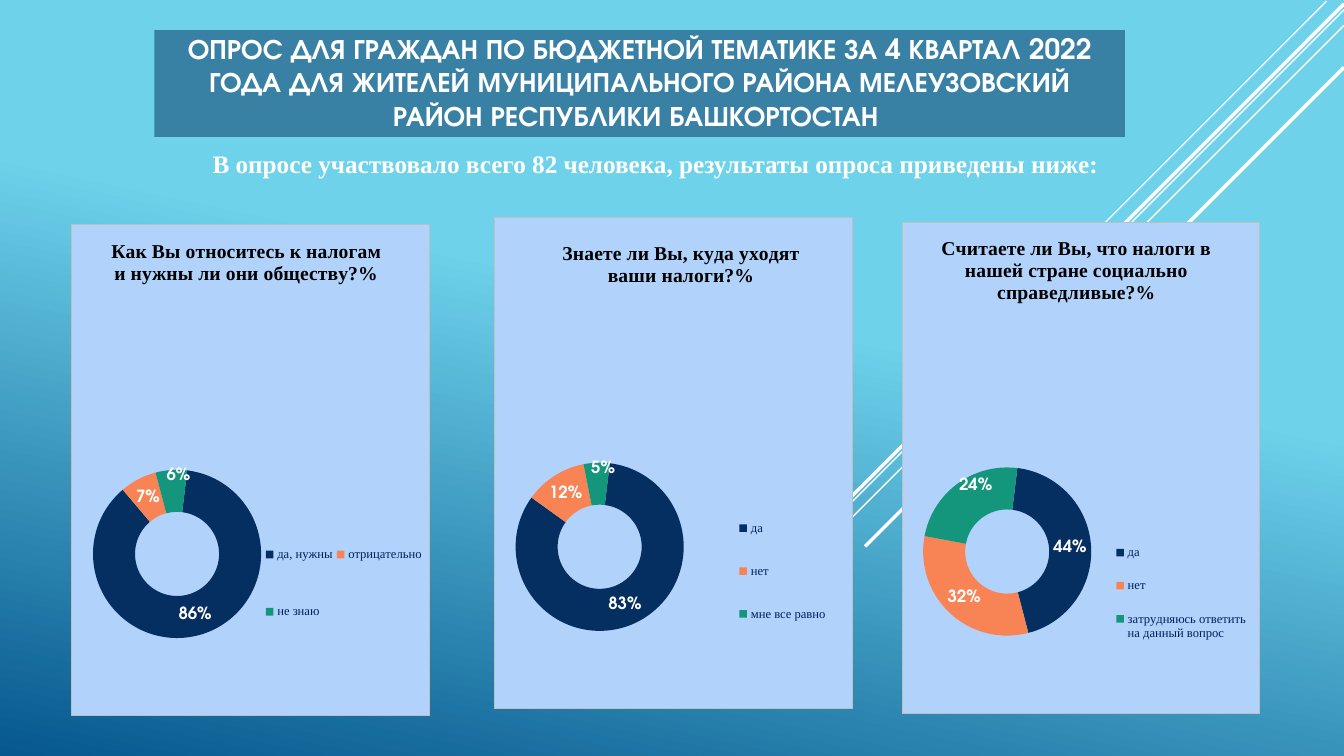
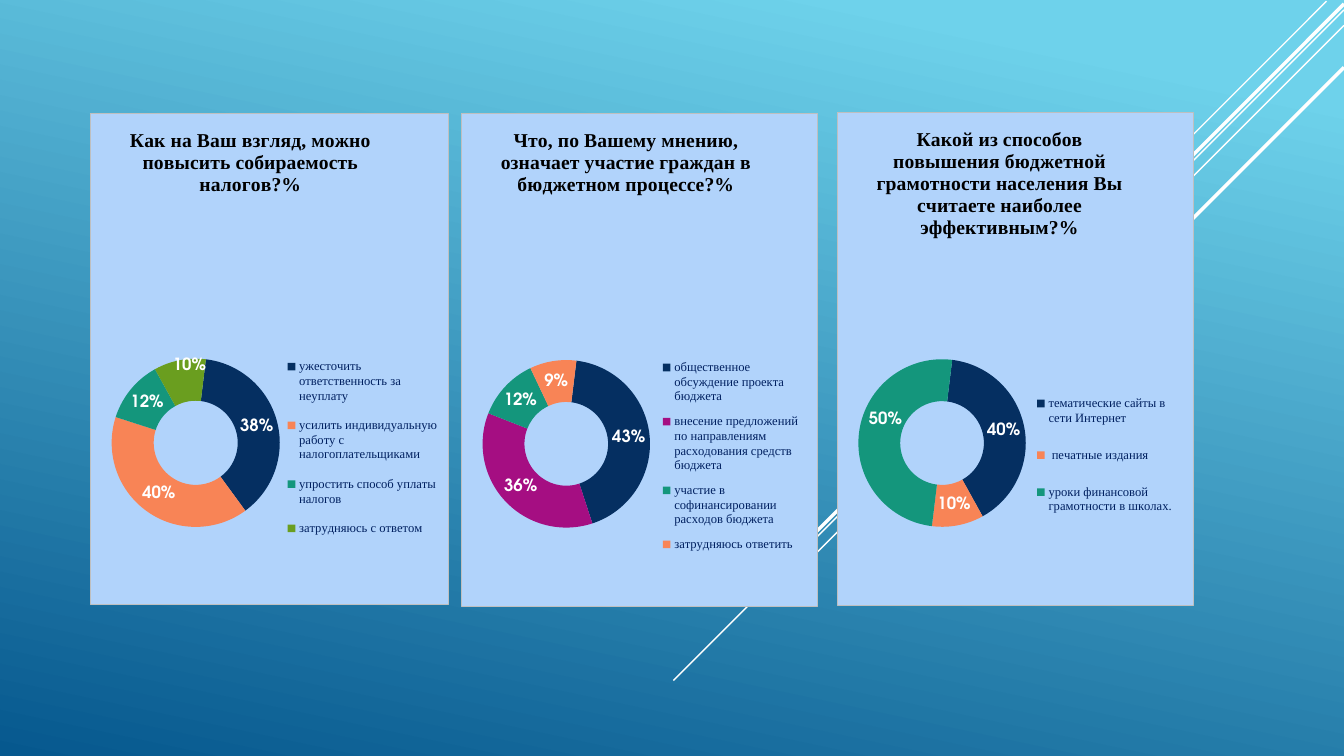
from lxml import etree
from pptx import Presentation
from pptx import util as u
from pptx.chart.data import CategoryChartData
from pptx.dml.color import RGBColor
from pptx.enum import chart as charts, shapes, text
from pptx.oxml import parse_xml
from pptx.oxml.ns import nsdecls, qn

COLORS = {
    "sky": "6ED2EB", "deep": "06588E", "white": "FFFFFF", "black": "000000",
    "navy": "052F61", "coral": "F88456", "green": "14967C", "lime": "6A9E1F",
    "plum": "A50E82", "panel": "B1D3FB", "border": "BFBFBF", "legend": "002060",
}
SANS = "TeX Gyre Adventor"
SERIF = "Times New Roman"
PERCENT = '0"%"'
STANDARD = ("navy", "coral", "green", "lime")

TITLE = ("ОПРОС ДЛЯ ГРАЖДАН ПО БЮДЖЕТНОЙ ТЕМАТИКЕ ЗА 4 КВАРТАЛ 2022 ГОДА ДЛЯ ЖИТЕЛЕЙ "
         "МУНИЦИПАЛЬНОГО РАЙОНА МЕЛЕУЗОВСКИЙ РАЙОН РЕСПУБЛИКИ БАШКОРТОСТАН ")
SUBTITLE = "В опросе участвовало всего 82 человека, результаты опроса приведены ниже:"

RAYS = [
    (33.43, 0.03, 10.58, 1), (33.87, 0.25, 16.9, 1), (33.87, 0.64, 13.77, 1),
    (33.87, 0.1, 13.46, 2.5), (33.87, 1.7, 12.07, 2.5),
]

SLIDES = [
    {"sky_until": 0.42, "title": TITLE, "subtitle": SUBTITLE, "charts": [
        {"box": (1.8, 5.65, 9.04, 12.4), "legend": (0.53, 0.57, 0.46, 0.32),
         "title": "Как Вы относитесь к налогам и нужны ли они обществу?%",
         "answers": [("да, нужны", 86), ("отрицательно", 7), ("не знаю", 6)]},
        {"box": (12.45, 5.47, 9.04, 12.4), "legend": (0.66, 0.56, 0.29, 0.32),
         "title": "Знаете ли Вы, куда уходят ваши налоги?%", "title_at": (0.18, 0.04),
         "answers": [("да", 83), ("нет", 12), ("мне все равно", 5)]},
        {"box": (22.72, 5.59, 9.04, 12.4), "legend": (0.58, 0.62, 0.4, 0.27),
         "title": "Считаете ли Вы, что налоги в нашей стране социально справедливые?%",
         "answers": [("да", 44), ("нет", 32), ("затрудняюсь ответить на данный вопрос", 24)]},
    ]},
    {"sky_until": 0.1, "charts": [
        {"box": (2.27, 2.85, 9.04, 12.4), "legend": (0.54, 0.47, 0.44, 0.42),
         "title": "Как на Ваш взгляд, можно повысить собираемость налогов?%",
         "answers": [("ужесточить ответственность за неуплату", 38),
                     ("усилить индивидуальную работу с налогоплательщиками", 40),
                     ("упростить способ уплаты налогов", 12),
                     ("затрудняюсь с ответом", 10)]},
        {"box": (11.62, 2.85, 9, 12.44), "legend": (0.55, 0.48, 0.41, 0.43),
         "title": "Что, по Вашему мнению, означает участие граждан в бюджетном процессе?%",
         "palette": ("navy", "plum", "green", "coral"), "raise_last": False,
         "answers": [("общественное обсуждение проекта бюджета", 43),
                     ("внесение предложений по направлениям расходования средств бюджета", 36),
                     ("участие в софинансировании расходов бюджета", 12),
                     ("затрудняюсь ответить", 9)]},
        {"box": (21.09, 2.83, 9, 12.44), "legend": (0.55, 0.53, 0.4, 0.33),
         "title": "Какой из способов повышения бюджетной грамотности населения "
                  "Вы считаете наиболее эффективным?%",
         "answers": [("тематические сайты в сети Интернет", 40), (" печатные издания", 10),
                     ("уроки финансовой грамотности в школах.", 50)]},
    ]},
]


def color(name):
    return RGBColor.from_string(COLORS[name])


def set_font(font, name, size, tint, bold=False):
    font.name, font.size, font.bold = name, u.Pt(size), bold
    font.color.rgb = color(tint)


def move(shape, *box):
    shape.left, shape.top, shape.width, shape.height = map(u.Cm, box)


def place(parent, index, numbers, absolute=True, inner=False):
    for old in parent.findall(qn("c:layout")):
        parent.remove(old)
    layout = parse_xml(f"<c:layout {nsdecls('c')}><c:manualLayout/></c:layout>")
    parent.insert(index, layout)
    settings = [("layoutTarget", "inner")] if inner else []
    if absolute:
        settings += [("xMode", "edge"), ("yMode", "edge")]
    settings += zip("xywh", numbers)
    for tag, value in settings:
        etree.SubElement(layout[0], qn(f"c:{tag}")).set("val", str(value))


def paint_background(slide, sky_until):
    fill = slide.background.fill
    fill.gradient()
    fill.gradient_angle = 258
    for stop, tint, position in zip(fill.gradient_stops, ("sky", "deep"), (sky_until, 1)):
        stop.color.rgb = color(tint)
        stop.position = position


def draw_rays(slide):
    for x, y, reach, width in RAYS:
        ray = slide.shapes.add_connector(
            shapes.MSO_CONNECTOR.STRAIGHT, u.Cm(x), u.Cm(y), u.Cm(x - reach), u.Cm(y + reach))
        ray.line.color.rgb = color("white")
        ray.line.width = u.Pt(width)
        etree.SubElement(ray.element.spPr, qn("a:effectLst"))


def write(shape, words, name, size, anchor):
    frame = shape.text_frame
    frame.word_wrap = True
    frame.auto_size = text.MSO_AUTO_SIZE.NONE
    frame.vertical_anchor = anchor
    paragraph = frame.paragraphs[0]
    paragraph.alignment = text.PP_ALIGN.CENTER
    paragraph.space_before = u.Pt(0)
    run = paragraph.add_run()
    run.text = words
    set_font(run.font, name, size, "white", True)


def write_heading(slide, title, subtitle):
    heading, line = slide.placeholders
    move(heading, 3.89, 0.76, 24.46, 2.69)
    heading.fill.solid()
    heading.fill.fore_color.rgb = color("navy")
    tint = heading.element.spPr.find(".//" + qn("a:srgbClr"))
    etree.SubElement(tint, qn("a:alpha")).set("val", "50000")
    write(heading, title, SANS, 20, text.MSO_ANCHOR.BOTTOM)
    move(line, 4.52, 3.61, 24, 1.02)
    write(line, subtitle, SERIF, 18, text.MSO_ANCHOR.TOP)


def format_panel(chart):
    panel = parse_xml(
        f'<c:spPr {nsdecls("c", "a")}>'
        f'<a:solidFill><a:srgbClr val="{COLORS["panel"]}"/></a:solidFill>'
        f'<a:ln w="9525"><a:solidFill><a:srgbClr val="{COLORS["border"]}"/></a:solidFill></a:ln>'
        '</c:spPr>')
    chart.element.find(qn("c:chart")).addnext(panel)


def raise_label(point):
    set_font(point.data_label.font, SANS, 12, "white", True)
    label = point.data_label.font and point.data_label
    return label


def format_ring(chart, palette, raise_last):
    plot = chart.plots[0]
    plot.vary_by_categories = True
    series = plot.series[0]
    labels = series.data_labels
    labels.show_value = True
    labels.number_format, labels.number_format_is_linked = PERCENT, False
    set_font(labels.font, SANS, 12, "white", True)
    last = len(series.values) - 1
    for index in range(last + 1):
        slice_format = series.points[index].format
        slice_format.fill.solid()
        slice_format.fill.fore_color.rgb = color(palette[index])
        slice_format.line.fill.background()
    if raise_last:
        set_font(series.points[last].data_label.font, SANS, 12, "white", True)
        label = chart.element.find(".//" + qn("c:dLbl"))
        place(label, 1, (0.016, -0.031), absolute=False)
        number = parse_xml(f'<c:numFmt {nsdecls("c")} sourceLinked="0"/>')
        number.set("formatCode", PERCENT)
        label.insert(2, number)
    for tag, value in (("firstSliceAng", 7), ("holeSize", 50)):
        chart.element.find(".//" + qn(f"c:{tag}")).set("val", str(value))


def add_ring(slide, box, title, answers, legend, title_at=(0.1, 0.02),
             palette=STANDARD, raise_last=True):
    data = CategoryChartData(number_format=PERCENT)
    data.categories = [answer for answer, share in answers]
    data.add_series("Series 1", [share for answer, share in answers])
    chart = slide.shapes.add_chart(
        charts.XL_CHART_TYPE.DOUGHNUT, *map(u.Cm, box), data).chart
    set_font(chart.font, SANS, 10, "white")
    format_panel(chart)

    chart.has_title = True
    paragraph = chart.chart_title.text_frame.paragraphs[0]
    run = paragraph.add_run()
    run.text = title
    set_font(run.font, SERIF, 14, "black", True)
    chart.chart_title.include_in_layout = False

    chart.has_legend = True
    chart.legend.position = charts.XL_LEGEND_POSITION.RIGHT
    chart.legend.include_in_layout = False
    set_font(chart.legend.font, SERIF, 9, "legend")

    format_ring(chart, palette, raise_last)
    root = chart.element
    place(root.find(".//" + qn("c:title")), 1, title_at)
    place(root.find(".//" + qn("c:legend")), 1, legend)
    place(root.find(".//" + qn("c:plotArea")), 0, (0.059, 0.433, 0.47, 0.475), inner=True)


def main():
    presentation = Presentation()
    presentation.slide_width, presentation.slide_height = u.Cm(33.87), u.Cm(19.05)
    for content in SLIDES:
        layout = presentation.slide_layouts[0 if "title" in content else 6]
        slide = presentation.slides.add_slide(layout)
        paint_background(slide, content["sky_until"])
        draw_rays(slide)
        if "title" in content:
            write_heading(slide, content["title"], content["subtitle"])
        for ring in content["charts"]:
            add_ring(slide, **ring)
    presentation.save("out.pptx")


if __name__ == "__main__":
    main()
